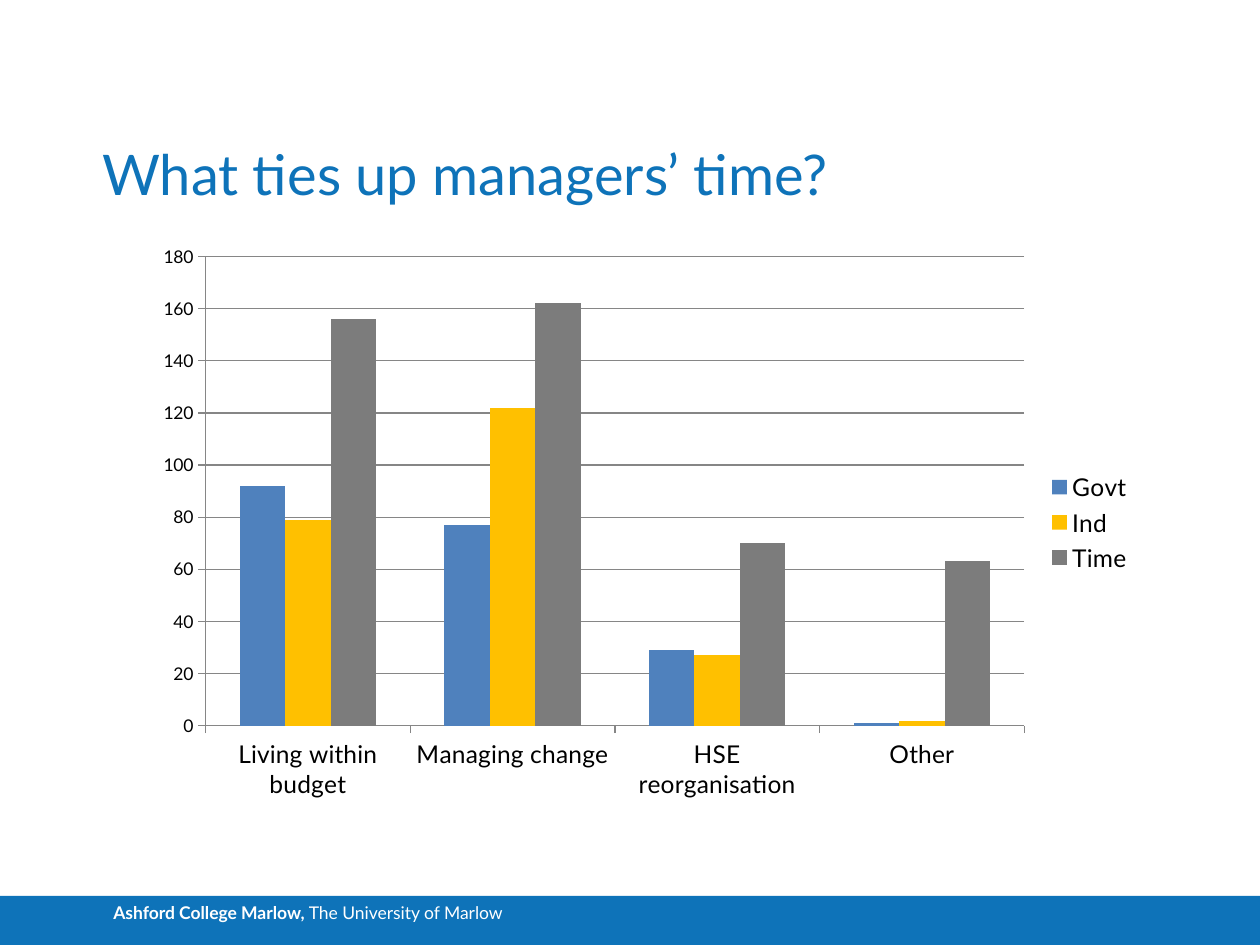
from dataclasses import dataclass

from pptx import Presentation
from pptx.chart.data import CategoryChartData
from pptx.dml.color import RGBColor
from pptx.enum.chart import XL_CHART_TYPE as ChartType
from pptx.enum.chart import XL_LEGEND_POSITION as LegendPosition
from pptx.enum.chart import XL_TICK_MARK as TickMark
from pptx.enum.shapes import MSO_SHAPE as Shape
from pptx.enum.text import MSO_ANCHOR as Anchor
from pptx.enum.text import PP_ALIGN as Align
from pptx.util import Pt

WIDTH, HEIGHT = 720, 540
BAND_HEIGHT = 28
TITLE_ONLY = 5

CATEGORIES = ["Living within budget", "Managing change", "HSE reorganisation", "Other"]
SERIES = {
    "Govt": [92, 77, 29, 1],
    "Ind": [79, 122, 27, 2],
    "Time": [156, 162, 70, 63],
}


@dataclass(frozen=True)
class Theme:
    font: str = "Lato"
    blue: str = "0E73B9"
    white: str = "FFFFFF"
    black: str = "000000"
    rule: str = "868686"
    series: tuple = ("4F81BD", "FFC000", "7C7C7C")
    title_size: int = 32
    label_size: int = 14
    small_size: int = 10


class SlideBuilder:
    def __init__(self, slide, theme):
        self.slide = slide
        self.theme = theme

    def style_font(self, font, size, color, bold=False):
        font.name = self.theme.font
        font.size = Pt(size)
        font.bold = bold
        font.color.rgb = RGBColor.from_string(color)

    def set_frame(self, frame, anchor, left=0, top=0):
        frame.word_wrap = True
        frame.vertical_anchor = anchor
        frame.margin_left, frame.margin_top = Pt(left), Pt(top)
        frame.margin_right = frame.margin_bottom = 0

    def title(self, text, left, top, width, height):
        title = self.slide.shapes.title
        title.left, title.top = Pt(left), Pt(top)
        title.width, title.height = Pt(width), Pt(height)
        frame = title.text_frame
        self.set_frame(frame, Anchor.BOTTOM)
        frame.text = text
        para = frame.paragraphs[0]
        para.alignment = Align.LEFT
        self.style_font(para.runs[0].font, self.theme.title_size, self.theme.blue)

    def footer_band(self, name, detail):
        """Full-width bar at the foot, with a bold name and a plain detail."""
        band = self.slide.shapes.add_shape(
            Shape.RECTANGLE, 0, Pt(HEIGHT - BAND_HEIGHT), Pt(WIDTH), Pt(BAND_HEIGHT)
        )
        band.shadow.inherit = False
        band.fill.solid()
        band.fill.fore_color.rgb = RGBColor.from_string(self.theme.blue)
        band.line.fill.background()
        self.set_frame(band.text_frame, Anchor.TOP, left=64.8, top=3.6)
        para = band.text_frame.paragraphs[0]
        para.alignment = Align.LEFT
        for text, bold in ((name, True), (detail, False)):
            span = para.add_run()
            span.text = text
            self.style_font(span.font, self.theme.small_size, self.theme.white, bold)

    def column_chart(self, categories, series, left, top, width, height):
        theme = self.theme
        data = CategoryChartData()
        data.categories = categories
        for name, values in series.items():
            data.add_series(name, values)
        chart = self.slide.shapes.add_chart(
            ChartType.COLUMN_CLUSTERED, Pt(left), Pt(top), Pt(width), Pt(height), data
        ).chart
        chart.has_title = False
        self.style_font(chart.font, theme.small_size, theme.black)

        plot = chart.plots[0]
        plot.gap_width = 150
        plot.overlap = 0
        plot.vary_by_categories = False
        for column, color in zip(plot.series, theme.series):
            column.format.fill.solid()
            column.format.fill.fore_color.rgb = RGBColor.from_string(color)

        value_axis, category_axis = chart.value_axis, chart.category_axis
        value_axis.minimum_scale, value_axis.maximum_scale = 0, 180
        value_axis.major_unit = 20
        value_axis.has_major_gridlines = True
        for axis in (value_axis, category_axis):
            axis.major_tick_mark = TickMark.OUTSIDE
            axis.minor_tick_mark = TickMark.NONE
        for ruled in (value_axis, category_axis, value_axis.major_gridlines):
            ruled.format.line.width = Pt(0.75)
            ruled.format.line.color.rgb = RGBColor.from_string(theme.rule)

        chart.has_legend = True
        chart.legend.position = LegendPosition.RIGHT
        chart.legend.include_in_layout = False
        for labels in (category_axis.tick_labels, chart.legend):
            self.style_font(labels.font, theme.label_size, theme.black)


def main():
    deck = Presentation()
    deck.slide_width, deck.slide_height = Pt(WIDTH), Pt(HEIGHT)
    page = deck.slides.add_slide(deck.slide_layouts[TITLE_ONLY])
    builder = SlideBuilder(page, Theme())
    builder.footer_band("Ashford College Marlow, ", "The University of Marlow")
    builder.title("What ties up managers’ time?", 58.3, 28, 648, 90)
    builder.column_chart(CATEGORIES, SERIES, 82, 134, 572.4, 329)
    deck.save("out.pptx")


if __name__ == "__main__":
    main()
